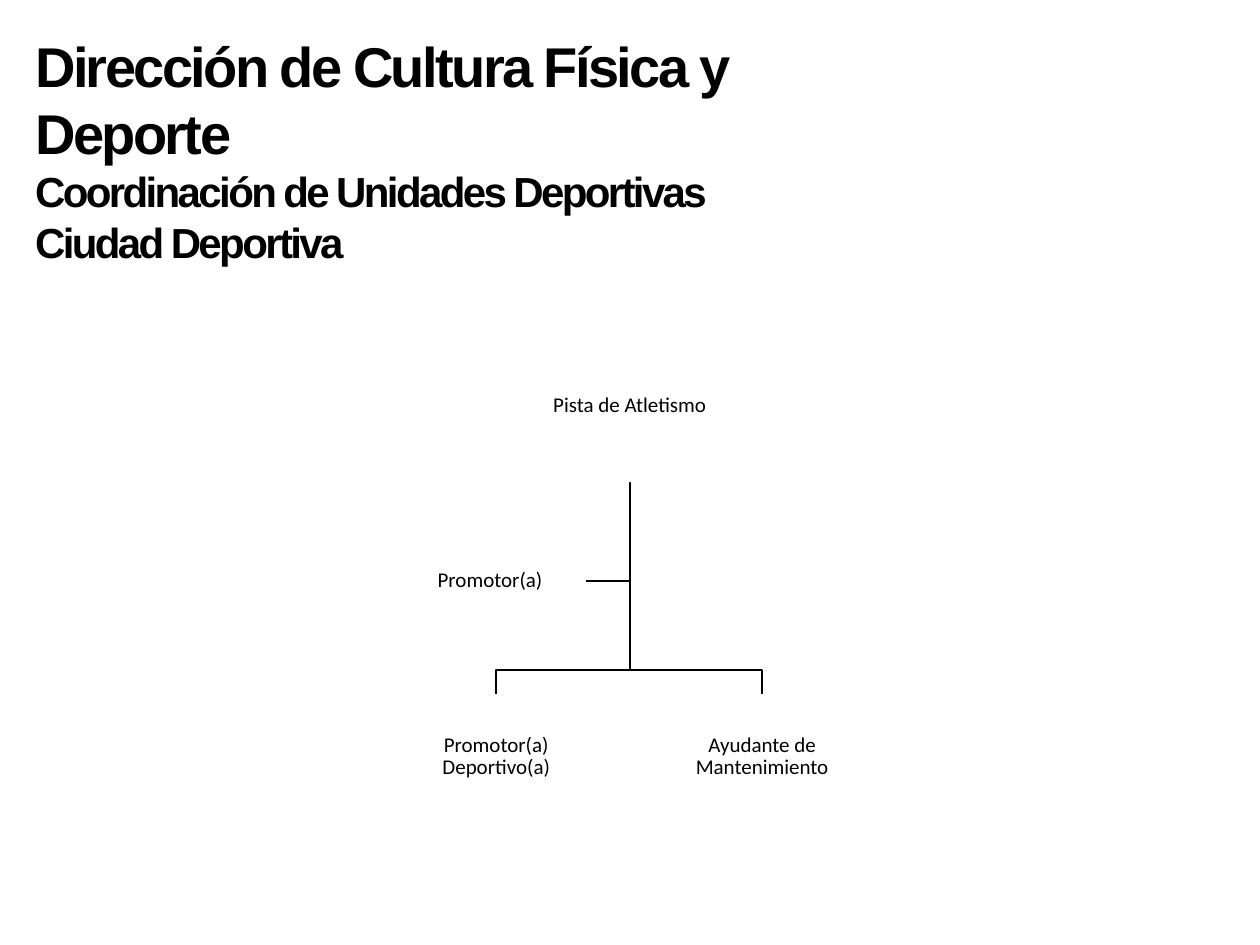
from dataclasses import dataclass

from pptx import Presentation, util as u
from pptx.dml.color import RGBColor
from pptx.enum import shapes, text

BLACK = RGBColor(0x00, 0x00, 0x00)
WHITE = RGBColor(0xFF, 0xFF, 0xFF)

HEADINGS = (
    ("Dirección de Cultura Física y Deporte", 32),
    ("Coordinación de Unidades Deportivas", 24),
    ("Ciudad Deportiva", 24),
)
LETTER_SPACING = "-150"  # hundredths of a point
BRANCH_Y = 13.51


@dataclass(frozen=True)
class Post:
    """A position in the organisation chart, measured in centimetres."""
    title: str
    left: float
    top: float
    width: float
    height: float

    @property
    def center_x(self) -> float:
        return self.left + self.width / 2

    @property
    def middle_y(self) -> float:
        return self.top + self.height / 2


HEAD = Post("Pista de Atletismo", 9.71, 6.65, 5.97, 3.07)
ASSISTANT = Post("Promotor(a)", 7.95, 10.72, 3.86, 1.98)
STAFF = [
    Post(title, left, 14, 4.37, 2.51)
    for title, left in (("Promotor(a) Deportivo(a)", 7.82),
                        ("Ayudante de Mantenimiento", 13.18))
]


def set_format(target, values: dict) -> None:
    for attribute, value in values.items():
        setattr(target, attribute, value)


def add_headings(slide) -> None:
    box = slide.shapes.add_textbox(u.Cm(0.46), u.Cm(0.51), u.Cm(18.31), u.Cm(5.05))
    frame = box.text_frame
    set_format(frame, {"word_wrap": True,
                       "auto_size": text.MSO_AUTO_SIZE.SHAPE_TO_FIT_TEXT})
    for index, (wording, size) in enumerate(HEADINGS):
        paragraph = frame.add_paragraph() if index else frame.paragraphs[0]
        run = paragraph.add_run()
        run.text = wording
        set_format(run.font, {"name": "Arial", "size": u.Pt(size), "bold": True})
        run.font.color.rgb = BLACK
        run.font._element.set("spc", LETTER_SPACING)


def add_link(slide, points: list[tuple[float, float]]) -> None:
    """Draw an open bent line through points given in centimetres."""
    start, *others = [(u.Cm(x), u.Cm(y)) for x, y in points]
    builder = slide.shapes.build_freeform(*start)
    builder.add_line_segments(others, close=False)
    link = builder.convert_to_shape()
    link.shadow.inherit = False
    link.fill.background()
    link.line.color.rgb = BLACK
    link.line.width = u.Pt(1)


def add_post(slide, post: Post) -> None:
    place = (u.Cm(n) for n in (post.left, post.top, post.width, post.height))
    box = slide.shapes.add_shape(shapes.MSO_SHAPE.RECTANGLE, *place)
    box.shadow.inherit = False
    box.fill.solid()
    box.fill.fore_color.rgb = WHITE
    box.line.fill.background()
    frame = box.text_frame
    margins = {f"margin_{side}": u.Cm(0.02)
               for side in ("left", "top", "right", "bottom")}
    set_format(frame, {**margins, "word_wrap": True,
                       "vertical_anchor": text.MSO_ANCHOR.MIDDLE})
    paragraph = frame.paragraphs[0]
    set_format(paragraph, {"alignment": text.PP_ALIGN.CENTER,
                           "line_spacing": 0.9, "space_after": u.Pt(4.2)})
    run = paragraph.add_run()
    run.text = post.title
    set_format(run.font, {"name": "Calibri", "size": u.Pt(12)})
    run.font.color.rgb = BLACK


def main() -> None:
    presentation = Presentation()
    set_format(presentation, {"slide_width": u.Cm(25.4), "slide_height": u.Cm(19.05)})
    slide = presentation.slides.add_slide(presentation.slide_layouts[6])

    add_headings(slide)
    trunk_x, trunk_top = HEAD.center_x, HEAD.top + HEAD.height
    add_link(slide, [(trunk_x, trunk_top), (trunk_x, ASSISTANT.middle_y),
                     (ASSISTANT.left + ASSISTANT.width, ASSISTANT.middle_y)])
    for post in STAFF:
        add_link(slide, [(trunk_x, trunk_top), (trunk_x, BRANCH_Y),
                         (post.center_x, BRANCH_Y), (post.center_x, post.top)])
    for post in (HEAD, *STAFF, ASSISTANT):
        add_post(slide, post)

    presentation.save("out.pptx")


if __name__ == "__main__":
    main()
